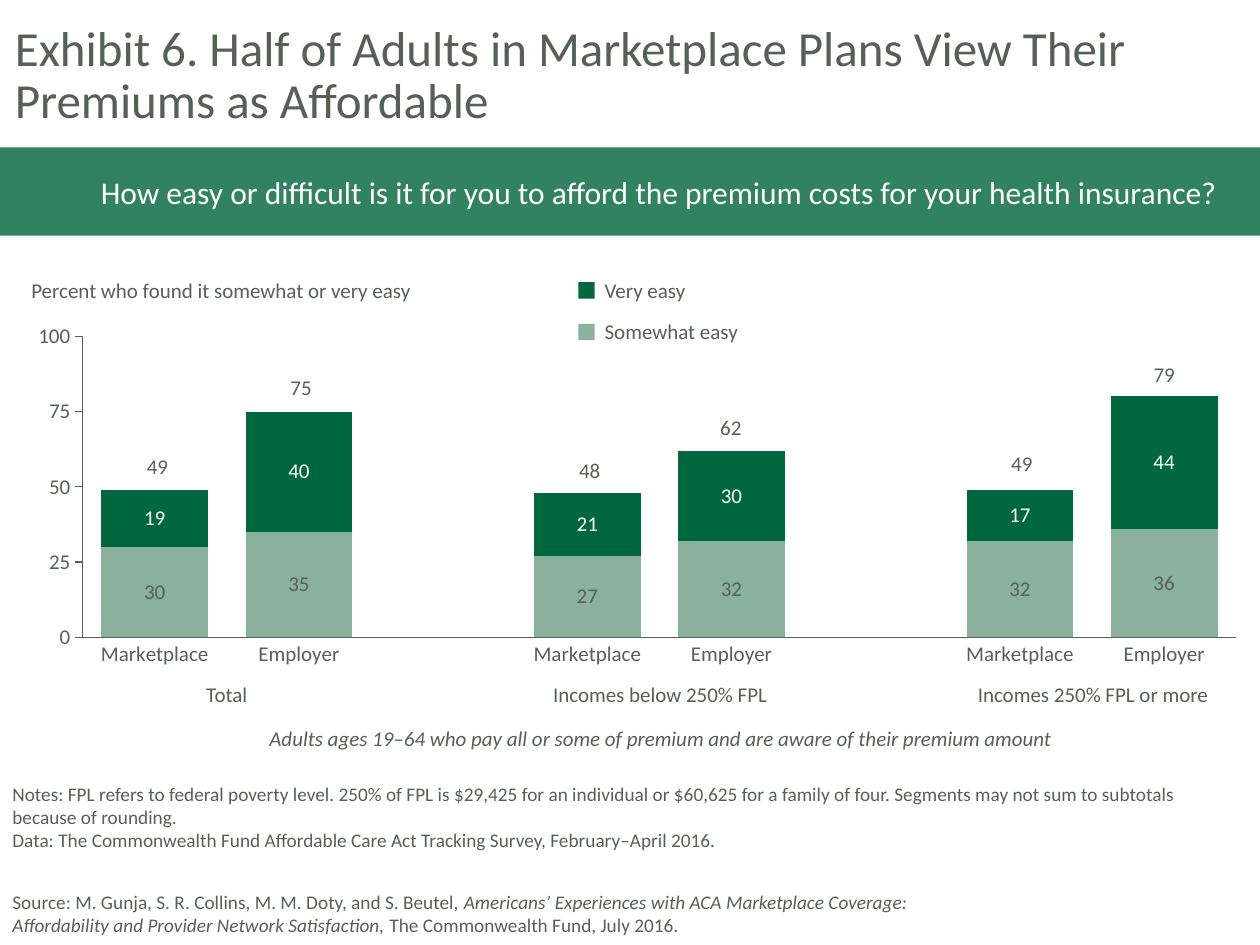
from lxml.etree import SubElement
from pptx import Presentation
from pptx.chart.data import CategoryChartData
from pptx.dml.color import RGBColor
from pptx.enum.chart import XL_CHART_TYPE, XL_LABEL_POSITION, XL_TICK_MARK
from pptx.enum.shapes import MSO_SHAPE
from pptx.enum.text import MSO_ANCHOR, PP_ALIGN
from pptx.oxml.ns import qn
from pptx.util import Inches, Pt

COLORS = {
    "text": "566057",
    "white": "FFFFFF",
    "band": "308261",
    "some": "89B19C",
    "very": "00673F",
}


class Page:
    def __init__(self, slide, face="Calibri", size=12):
        self.slide = slide
        self.face = face
        self.size = size

    def color(self, name):
        return RGBColor.from_string(COLORS[name])

    def style(self, font, size=None, color="text", italic=False):
        font.name = self.face
        font.size = Pt(size or self.size)
        font.color.rgb = self.color(color)
        font.italic = italic

    def fill(self, frame, paras, size=None, color="text", align=PP_ALIGN.LEFT, lead=None):
        frame.word_wrap = True
        for i, runs in enumerate(paras):
            para = frame.paragraphs[0] if i == 0 else frame.add_paragraph()
            para.alignment = align
            if lead:
                para.line_spacing = Pt(lead)
            for words, italic in runs:
                for j, line in enumerate(words.split("\n")):
                    if j:
                        para.add_line_break()
                    run = para.add_run()
                    run.text = line
                    self.style(run.font, size, color, italic)

    def text(self, box, paras, anchor=MSO_ANCHOR.TOP, **look):
        frame = self.slide.shapes.add_textbox(*map(Inches, box)).text_frame
        frame.vertical_anchor = anchor
        self.fill(frame, paras, **look)

    def label(self, box, words, italic=False, **look):
        self.text(box, [[(words, italic)]], **look)

    def rect(self, box, fill):
        shape = self.slide.shapes.add_shape(MSO_SHAPE.RECTANGLE, *map(Inches, box))
        shape.shadow.inherit = False
        shape.fill.solid()
        shape.fill.fore_color.rgb = self.color(fill)
        shape.line.fill.background()
        return shape

    def band(self, box, words):
        frame = self.rect(box, "band").text_frame
        frame.margin_left = Inches(0.8)
        frame.vertical_anchor = MSO_ANCHOR.MIDDLE
        self.fill(frame, [[(words, False)]], size=18, color="white")

    def chart(self, box, cats, series, plot):
        data = CategoryChartData(number_format="0")
        data.categories = cats
        for name, values, _, _ in series:
            data.add_series(name, values)
        chart = self.slide.shapes.add_chart(
            XL_CHART_TYPE.COLUMN_STACKED, *map(Inches, box), data
        ).chart
        chart.has_legend = False
        chart.has_title = False
        self.style(chart.font)
        bars = chart.plots[0]
        bars.gap_width = 35
        bars.overlap = 100
        bars.vary_by_categories = False
        for item, (_, _, fill, ink) in zip(bars.series, series):
            item.format.fill.solid()
            item.format.fill.fore_color.rgb = self.color(fill)
            labels = item.data_labels
            labels.show_value = True
            labels.number_format = "0"
            labels.number_format_is_linked = False
            labels.position = XL_LABEL_POSITION.CENTER
            self.style(labels.font, color=ink)
        self.axes(chart)
        self.place(chart, plot)

    def axes(self, chart):
        cat, val = chart.category_axis, chart.value_axis
        cat.major_tick_mark = XL_TICK_MARK.NONE
        val.major_tick_mark = XL_TICK_MARK.OUTSIDE
        val.has_major_gridlines = False
        val.minimum_scale = 0
        val.maximum_scale = 100
        val.major_unit = 25
        val.tick_labels.number_format = "0"
        val.tick_labels.number_format_is_linked = False
        for axis in (cat, val):
            axis.minor_tick_mark = XL_TICK_MARK.NONE
            axis.format.line.color.rgb = self.color("text")
            axis.format.line.width = Pt(0.75)

    def place(self, chart, plot):
        area = chart.plots[0]._element.getparent()
        layout = area.find(qn("c:layout"))
        if layout is None:
            layout = SubElement(area, qn("c:layout"))
            area.insert(0, layout)
        manual = SubElement(layout, qn("c:manualLayout"))
        parts = [("layoutTarget", "inner"), ("xMode", "edge"), ("yMode", "edge")]
        for tag, value in parts + list(zip("xywh", plot)):
            SubElement(manual, qn(f"c:{tag}")).set("val", str(value))


def main():
    deck = Presentation()
    deck.slide_width = Inches(10)
    deck.slide_height = Inches(7.5)
    page = Page(deck.slides.add_slide(deck.slide_layouts[6]))
    mid = PP_ALIGN.CENTER

    pair = ["Marketplace", "Employer"]
    page.chart(
        (0.15, 2.57, 9.74, 2.92),
        pair + [""] + pair + [""] + pair,
        [
            ("Somewhat easy", (30, 35, None, 27, 32, None, 32, 36), "some", "text"),
            ("Very easy", (19, 40, None, 21, 30, None, 17, 44), "very", "white"),
        ],
        (0.052, 0.031, 0.94, 0.821),
    )

    sums = [
        (1.06, 3.55, 49), (2.2, 2.92, 75), (4.49, 3.58, 48),
        (5.61, 3.24, 62), (7.92, 3.53, 49), (9.05, 2.82, 79),
    ]
    for left, top, total in sums:
        page.label((left, top, 0.38, 0.3), str(total), align=mid)

    page.label(
        (0.02, 0.14, 10, 0.94),
        "Exhibit 6. Half of Adults in Marketplace Plans View Their Premiums as Affordable",
        size=28, lead=30,
    )
    page.band(
        (0, 1.17, 10, 0.7),
        "How easy or difficult is it for you to afford the premium costs for your health insurance?",
    )

    page.label((0.15, 2.15, 3.29, 0.3), "Percent who found it somewhat or very easy")
    for top, fill, words in [(2.15, "very", "Very easy"), (2.48, "some", "Somewhat easy")]:
        page.rect((4.59, top + 0.09, 0.13, 0.13), fill)
        page.label((4.7, top, 1.51, 0.3), words)

    groups = [
        (1.35, 0.9, "Total"),
        (4.25, 1.98, "Incomes below 250% FPL"),
        (7.65, 2.05, "Incomes 250% FPL or more"),
    ]
    for left, width, words in groups:
        page.label((left, 5.36, width, 0.3), words, align=mid)
    page.label(
        (1.29, 5.71, 7.91, 0.3),
        "Adults ages 19–64 who pay all or some of premium and are aware of their premium amount",
        italic=True, align=mid,
    )

    notes = (
        "Notes: FPL refers to federal poverty level. 250% of FPL is $29,425 for an individual "
        "or $60,625 for a family of four. Segments may not sum to subtotals \nbecause of rounding."
    )
    data = "Data: The Commonwealth Fund Affordable Care Act Tracking Survey, February–April 2016."
    page.text(
        (0, 6.15, 10, 0.66), [[(notes, False)], [(data, False)]],
        anchor=MSO_ANCHOR.BOTTOM, size=11,
    )
    source = [
        ("Source: M. Gunja, S. R. Collins, M. M. Doty, and S. Beutel, ", False),
        ("Americans’ Experiences with ACA Marketplace Coverage: "
         "Affordability and Provider Network Satisfaction,", True),
        (" The Commonwealth Fund, July 2016.", False),
    ]
    page.text((0, 7.01, 7.61, 0.47), [source], anchor=MSO_ANCHOR.BOTTOM, size=11)

    deck.save("out.pptx")


if __name__ == "__main__":
    main()
